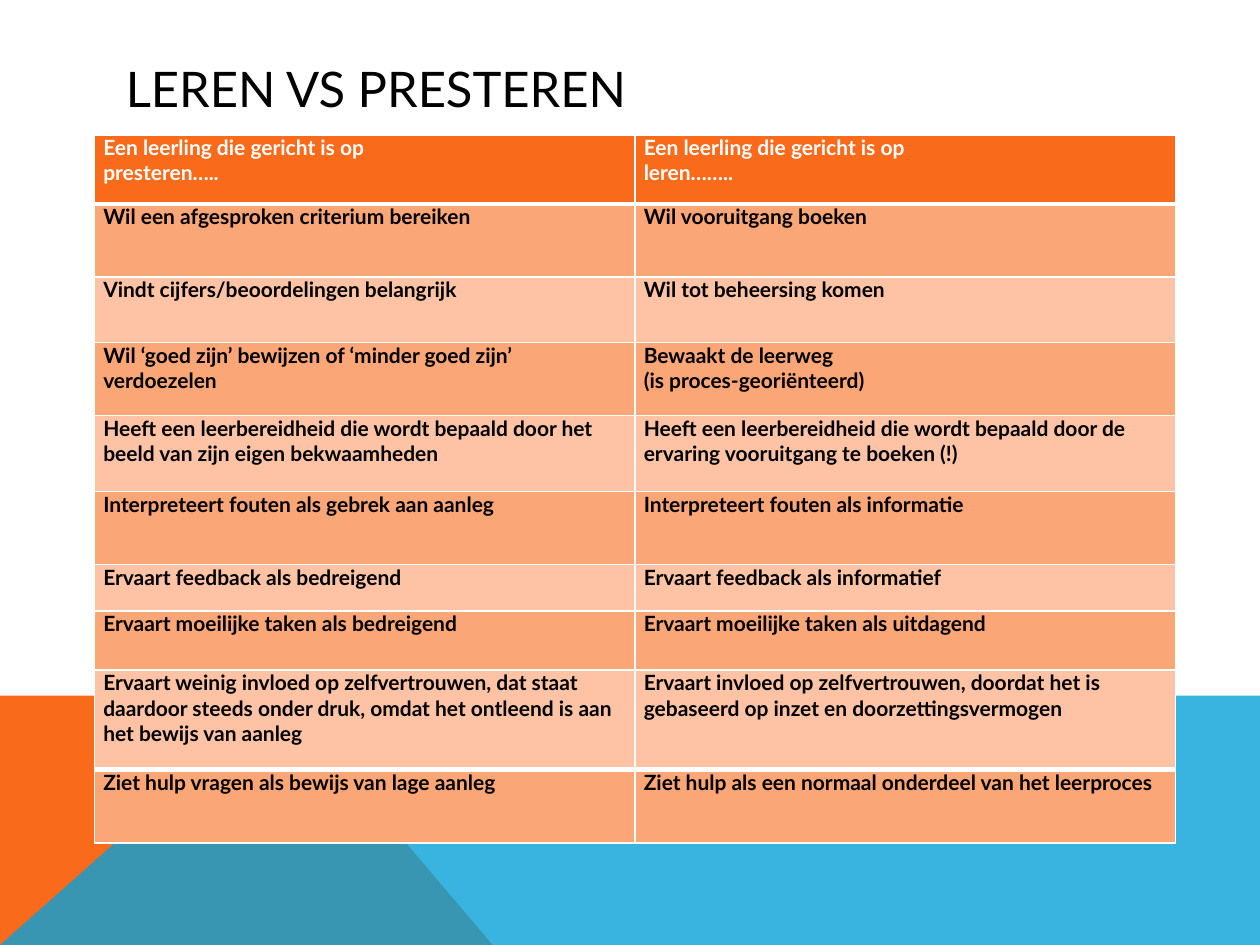
from lxml import etree
from pptx import Presentation
from pptx.dml.color import RGBColor
from pptx.enum.text import MSO_ANCHOR
from pptx.oxml.ns import qn
from pptx.util import Inches, Pt

MIDDLE = MSO_ANCHOR.MIDDLE
WIDTH, HEIGHT = 10, 7.5
FONT = "Lato"
COLORS = {
    "orange": "F96A1B",
    "blue": "08A1D9",
    "dark_band": "FBA676",
    "light_band": "FDC3A4",
    "white": "FFFFFF",
    "black": "000000",
}
BAND_TOP, BAND_PEAK = 5.52, 2.23
THIN, THICK = 1, 3
ROW_HEIGHTS = [0.55, 0.58, 0.52, 0.58, 0.6, 0.58, 0.37, 0.47, 0.79, 0.58]
ROWS = [
    ("Een leerling die gericht is op\npresteren…..",
     "Een leerling die gericht is op\nleren…….."),
    ("Wil een afgesproken criterium bereiken", "Wil vooruitgang boeken"),
    ("Vindt cijfers/beoordelingen belangrijk", "Wil tot beheersing komen"),
    ("Wil ‘goed zijn’ bewijzen of ‘minder goed zijn’ verdoezelen",
     "Bewaakt de leerweg\n(is proces-georiënteerd)"),
    ("Heeft een leerbereidheid die wordt bepaald door het beeld van zijn eigen bekwaamheden",
     "Heeft een leerbereidheid die wordt bepaald door de ervaring vooruitgang te boeken (!)"),
    ("Interpreteert fouten als gebrek aan aanleg", "Interpreteert fouten als informatie"),
    ("Ervaart feedback als bedreigend", "Ervaart feedback als informatief"),
    ("Ervaart moeilijke taken als bedreigend", "Ervaart moeilijke taken als uitdagend"),
    ("Ervaart weinig invloed op zelfvertrouwen, dat staat daardoor steeds onder druk, "
     "omdat het ontleend is aan het bewijs van aanleg",
     "Ervaart invloed op zelfvertrouwen, doordat het is gebaseerd op inzet en doorzettingsvermogen"),
    ("Ziet hulp vragen als bewijs van lage aanleg",
     "Ziet hulp als een normaal onderdeel van het leerproces"),
]


def rgb(name):
    """Return the named colour."""
    return RGBColor.from_string(COLORS[name])


def write_text(frame, text, size=12, color="black", bold=False):
    """Write one paragraph per line of text in a uniform format."""
    frame.word_wrap = True
    frame.text = text
    for paragraph in frame.paragraphs:
        font = paragraph.runs[0].font
        font.name, font.size, font.bold = FONT, Pt(size), bold
        font.color.rgb = rgb(color)


def add_band(slide, points, color, opacity=100):
    """Draw a closed polygon without outline."""
    builder = slide.shapes.build_freeform(*map(Inches, points[0]), scale=1.0)
    builder.add_line_segments([tuple(map(Inches, point)) for point in points[1:]], close=True)
    shape = builder.convert_to_shape()
    shape.shadow.inherit = False
    shape.line.fill.background()
    shape.fill.solid()
    shape.fill.fore_color.rgb = rgb(color)
    if opacity < 100:
        fill_color = shape.fill._xPr.find(qn("a:solidFill"))[0]
        etree.SubElement(fill_color, qn("a:alpha")).set("val", str(opacity * 1000))


def add_title(slide, text):
    """Add the slide title."""
    box = slide.shapes.add_textbox(Inches(0.9), Inches(0.4), Inches(8.22), Inches(0.6))
    box.text_frame.vertical_anchor = MIDDLE
    write_text(box.text_frame, text, size=28)


def set_borders(cell, top, bottom):
    """Give a cell white borders of the stated weights."""
    properties = cell._tc.get_or_add_tcPr()
    for side, weight in (("L", THIN), ("R", THIN), ("T", top), ("B", bottom)):
        line = etree.SubElement(properties, qn(f"a:ln{side}"), w=str(Pt(weight)))
        fill = etree.SubElement(line, qn("a:solidFill"))
        etree.SubElement(fill, qn("a:srgbClr"), val=COLORS["white"])


def format_cell(cell, text, row):
    """Fill one cell according to its row."""
    last = len(ROWS) - 1
    top = THICK if row in (1, last) else THIN
    bottom = THICK if row in (0, last - 1) else THIN
    set_borders(cell, top, bottom)
    band = "dark_band" if row % 2 else "light_band"
    cell.fill.solid()
    cell.fill.fore_color.rgb = rgb(band if row else "orange")
    cell.margin_left = cell.margin_right = Inches(0.07)
    cell.margin_top = cell.margin_bottom = 0
    write_text(cell.text_frame, text, color="black" if row else "white", bold=True)


def add_comparison(slide):
    """Add the two-column comparison table."""
    table = slide.shapes.add_table(
        len(ROWS), 2, Inches(0.75), Inches(1.07), Inches(8.58), Inches(sum(ROW_HEIGHTS))
    ).table
    for row, (texts, height) in enumerate(zip(ROWS, ROW_HEIGHTS)):
        table.rows[row].height = Inches(height)
        for column, text in enumerate(texts):
            format_cell(table.cell(row, column), text, row)


def main():
    """Build and save the slide."""
    presentation = Presentation()
    presentation.slide_width, presentation.slide_height = Inches(WIDTH), Inches(HEIGHT)
    slide = presentation.slides.add_slide(presentation.slide_layouts[6])
    peak = (BAND_PEAK, BAND_TOP)
    add_band(slide, [(0, HEIGHT), (0, BAND_TOP), peak, (3.91, HEIGHT)], "orange")
    add_band(slide, [(0, HEIGHT), peak, (WIDTH, BAND_TOP), (WIDTH, HEIGHT)], "blue", opacity=80)
    add_title(slide, "LEREN VS PRESTEREN")
    add_comparison(slide)
    presentation.save("out.pptx")


if __name__ == "__main__":
    main()
